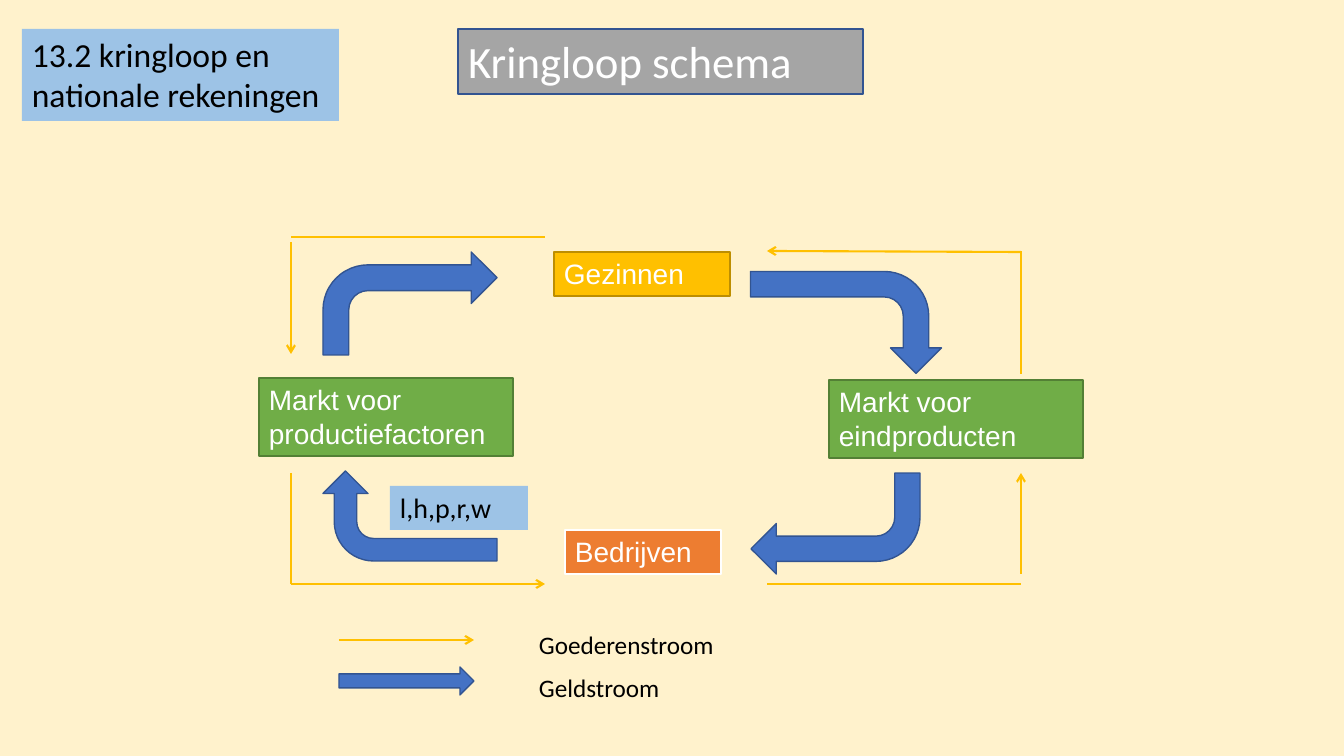
from pptx import Presentation
from pptx.dml.color import RGBColor
from pptx.enum.shapes import MSO_CONNECTOR as Connector, MSO_SHAPE as Shape
from pptx.enum.text import MSO_ANCHOR as Anchor, MSO_AUTO_SIZE as AutoSize, PP_ALIGN as Align
from pptx.oxml.ns import qn
from pptx.util import Pt
from lxml.etree import SubElement

SCALE = 12192000 / 1344
COLORS = {
    "cream": "FFF2CC", "gold": "FFC000", "gold edge": "BD8E00",
    "orange": "ED7D31", "green": "70AD47", "green edge": "538035",
    "blue": "4472C4", "blue edge": "325491", "sky": "9DC3E6",
    "grey": "A5A5A5", "white": "FFFFFF", "black": "000000",
}


def px(*lengths):
    return [round(length * SCALE) for length in lengths]


def color(name):
    return RGBColor.from_string(COLORS[name])


class FlowPage:
    """Hold the deck style and the slide on which the flow diagram is drawn."""

    frame_format = {"word_wrap": True, "auto_size": AutoSize.NONE, "vertical_anchor": Anchor.TOP}

    def __init__(self, deck, background):
        self.page = deck.slides.add_slide(deck.slide_layouts[5])
        fill = self.page.background.fill
        fill.solid()
        fill.fore_color.rgb = color(background)

    def paint(self, shape, fill, edge=None, width=1):
        shape.fill.solid()
        shape.fill.fore_color.rgb = color(fill)
        if edge:
            shape.line.color.rgb = color(edge)
            shape.line.width = Pt(width)
        else:
            shape.line.fill.background()

    def set_text(self, shape, text, size, font, ink):
        frame = shape.text_frame
        for name, value in self.frame_format.items():
            setattr(frame, name, value)
        para = frame.paragraphs[0]
        para.alignment = Align.LEFT
        span = para.add_run()
        span.text = text
        for name, value in {"size": Pt(size), "name": font}.items():
            setattr(span.font, name, value)
        span.font.color.rgb = color(ink)

    def title(self, text, place, fill, edge):
        shape = self.page.shapes.title
        for name, value in zip(("left", "top", "width", "height"), px(*place)):
            setattr(shape, name, value)
        self.paint(shape, fill, edge)
        self.set_text(shape, text, 32, "Calibri", "white")

    def block(self, kind, place, fill, edge=None, width=1, turn=0):
        shape = self.page.shapes.add_shape(kind, *px(*place))
        shape.shadow.inherit = False
        shape.rotation = turn
        self.paint(shape, fill, edge, width)
        return shape

    def box(self, text, place, fill, edge=None, width=1, size=20, font="Arial", ink="white"):
        shape = self.block(Shape.RECTANGLE, place, fill, edge, width)
        self.set_text(shape, text, size, font, ink)

    def label(self, text, place):
        self.set_text(self.page.shapes.add_textbox(*px(*place)), text, 18, "Calibri", "black")

    def line(self, ends, arrow=False):
        line = self.page.shapes.add_connector(Connector.STRAIGHT, *px(*ends))
        line.line.color.rgb = color("gold")
        line.line.width = Pt(1.5)
        properties = line._element.spPr
        if arrow:
            SubElement(properties.find(qn("a:ln")), qn("a:tailEnd"), type="arrow")
        SubElement(properties, qn("a:effectLst"))


def main():
    deck = Presentation()
    deck.slide_width, deck.slide_height = px(1344, 756)
    flow = FlowPage(deck, "cream")

    flow.title("Kringloop schema", (458, 29, 405, 65), "grey", "blue edge")
    flow.box("Gezinnen", (554, 252, 176, 44), "gold", "gold edge")
    flow.box("Bedrijven", (565, 530, 156, 44), "orange", "white", 1.5)
    flow.box("Markt voor productiefactoren", (259, 378, 254, 78), "green", "green edge")
    flow.box("Markt voor eindproducten", (829, 380, 254, 78), "green", "green edge")

    for place, turn in [
        ((323, 252, 174, 103), 0),
        ((795, 227, 102, 191), 90),
        ((365, 429, 90, 174), 270),
        ((751, 473, 169, 101), 180),
    ]:
        flow.block(Shape.BENT_ARROW, place, "blue", "blue edge", turn=turn)

    left, right, bottom = 291, 1021, 584
    left_end, right_end = left + 254, right - 254
    for ends in [
        (left_end, 237, left, 237),
        (right, 374, right, 251),
        (left, 473, left, bottom),
        (right, bottom, right_end, bottom),
    ]:
        flow.line(ends)
    for ends in [
        (left, 242, left, 354),
        (right, 574, right, 473),
        (left, bottom, left_end, bottom),
        (right, 252, right_end, 251),
        (339, 640, 474, 640),
    ]:
        flow.line(ends, arrow=True)

    flow.block(Shape.RIGHT_ARROW, (339, 667, 135, 28), "blue", "blue edge")
    for row, text in enumerate(("Goederenstroom", "Geldstroom")):
        flow.label(text, (529, 624 + 43 * row, 222, 40))

    note = {"font": "Calibri", "ink": "black"}
    flow.box("l,h,p,r,w", (390, 486, 138, 44), "sky", **note)
    flow.box("13.2 kringloop en nationale rekeningen", (22, 29, 317, 92), "sky", size=24, **note)
    deck.save("out.pptx")


if __name__ == "__main__":
    main()
